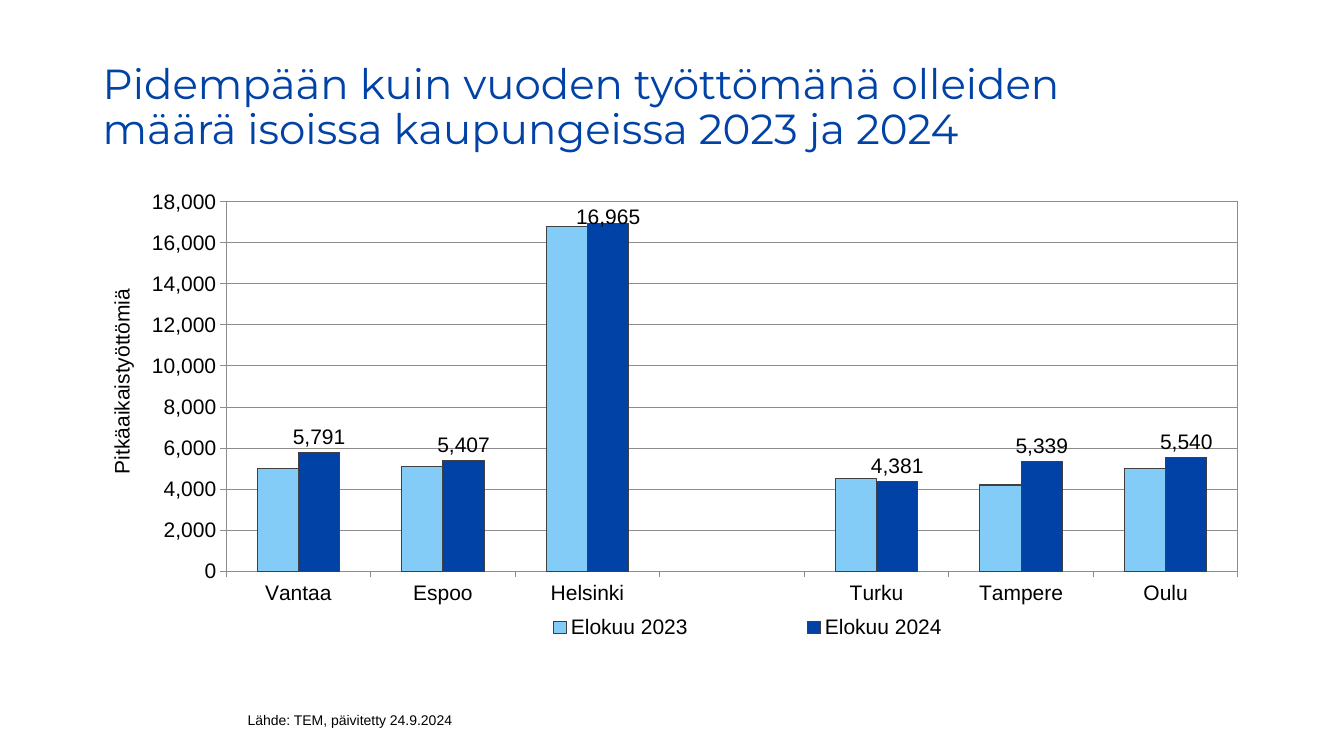
from dataclasses import dataclass
from typing import Any, Optional

from lxml import etree
from pptx import Presentation, util as u
from pptx.chart import data as cd
from pptx.dml import color as col
from pptx.enum import chart as ch, text as tx
from pptx.oxml import ns


@dataclass(frozen=True)
class Theme:
    blue: str = "0042A6"
    sky: str = "84CCF8"
    black: str = "000000"
    edge: str = "404040"
    grid: str = "8C8C8C"
    head: str = "Montserrat"
    body: str = "Arial"
    big: float = 30
    mid: float = 15
    small: float = 10


@dataclass(frozen=True)
class Label:
    words: str
    box: tuple[float, float, float, float]
    face: str
    size: float
    tint: str
    lead: float = 1.0


@dataclass(frozen=True)
class Year:
    name: str
    vals: tuple[Optional[int], ...]
    tint: str


T = Theme()
LABELS = (
    Label("Pidempään kuin vuoden työttömänä olleiden määrä isoissa kaupungeissa 2023 ja 2024",
          (2.34, 1.47, 28.12, 2.77), T.head, T.big, T.blue, 0.9),
    Label("Lähde: TEM, päivitetty 24.9.2024",
          (5.99, 17.81, 11.71, 1.02), T.body, T.small, T.black),
)
CITIES = ("Vantaa", "Espoo", "Helsinki", "", "Turku", "Tampere", "Oulu")
YEARS = (
    Year("Elokuu 2023", (5000, 5100, 16800, None, 4500, 4200, 5000), T.sky),
    Year("Elokuu 2024", (5791, 5407, 16965, None, 4381, 5339, 5540), T.blue),
)


def rgb(tint: str) -> col.RGBColor:
    return col.RGBColor.from_string(tint)


def style(font: Any, face: str, size: float, tint: str) -> None:
    font.name, font.size, font.bold = face, u.Pt(size), False
    font.color.rgb = rgb(tint)


def stroke(line: Any, tint: str) -> None:
    line.color.rgb = rgb(tint)
    line.width = u.Pt(0.75)


def place(item: Any, after: str, **spots: float) -> None:
    """Give a chart part a manual layout, put behind its named child."""
    for old in item.findall(ns.qn("c:layout")):
        item.remove(old)
    lay = etree.Element(ns.qn("c:layout"))
    hand = etree.SubElement(lay, ns.qn("c:manualLayout"))
    if after == "c:layoutStart":
        etree.SubElement(hand, ns.qn("c:layoutTarget")).set("val", "inner")
    if after != "c:idx":
        for mode in ("c:xMode", "c:yMode"):
            etree.SubElement(hand, ns.qn(mode)).set("val", "edge")
    for key, val in spots.items():
        etree.SubElement(hand, ns.qn(f"c:{key}")).set("val", str(val))
    prior = item.find(ns.qn(after))
    if prior is None:
        item.insert(0, lay)
    else:
        prior.addnext(lay)


def write(slide: Any, label: Label) -> None:
    frame = slide.shapes.add_textbox(*map(u.Cm, label.box)).text_frame
    frame.word_wrap = True
    para = frame.paragraphs[0]
    para.line_spacing = label.lead
    run = para.add_run()
    run.text = label.words
    style(run.font, label.face, label.size, label.tint)


def axes(chart: Any) -> None:
    cat, val = chart.category_axis, chart.value_axis
    for axis in (cat, val):
        axis.major_tick_mark = ch.XL_TICK_MARK.OUTSIDE
        axis.minor_tick_mark = ch.XL_TICK_MARK.NONE
        stroke(axis.format.line, T.grid)
    val.minimum_scale, val.maximum_scale, val.major_unit = 0, 18000, 2000
    val.tick_labels.number_format = "#,##0"
    val.tick_labels.number_format_is_linked = False
    stroke(val.major_gridlines.format.line, T.grid)
    run = val.axis_title.text_frame.paragraphs[0].add_run()
    run.text = "Pitkäaikaistyöttömiä"
    style(run.font, T.body, T.mid, T.black)
    place(val.axis_title._element, "c:tx", x=0.01, y=0.21)


def bars(plot: Any) -> None:
    plot.gap_width, plot.overlap = 150, 0
    plot.vary_by_categories = False
    for year, row in zip(YEARS, plot.series):
        row.format.fill.solid()
        row.format.fill.fore_color.rgb = rgb(year.tint)
        stroke(row.format.line, T.edge)
    # Values above the later year, with the tallest moved down a little
    marks = plot.series[1].data_labels
    marks.show_value = True
    marks.number_format, marks.number_format_is_linked = "#,##0", False
    marks.position = ch.XL_LABEL_POSITION.OUTSIDE_END
    style(marks.font, T.body, T.mid, T.black)
    top = plot.series[1].points[CITIES.index("Helsinki")].data_label
    top.position = ch.XL_LABEL_POSITION.OUTSIDE_END
    place(top._dLbl, "c:idx", x=0, y=0.02)


def draw(slide: Any) -> None:
    data = cd.CategoryChartData(number_format="#,##0")
    data.categories = CITIES
    for year in YEARS:
        data.add_series(year.name, year.vals)
    box = map(u.Cm, (2.34, 4.75, 29.21, 11.58))
    chart = slide.shapes.add_chart(ch.XL_CHART_TYPE.COLUMN_CLUSTERED, *box, data).chart
    chart.has_title = False
    style(chart.font, T.body, T.mid, T.black)
    axes(chart)
    bars(chart.plots[0])
    # Legend under the plot
    chart.has_legend = True
    chart.legend.position = ch.XL_LEGEND_POSITION.BOTTOM
    chart.legend.include_in_layout = False
    place(chart.legend._element, "c:legendPos", x=0.3, y=0.92, w=0.53, h=0.07)
    # Plot area and its frame
    area = chart._chartSpace.chart.plotArea
    place(area, "c:layoutStart", x=0.115, y=0.029, w=0.873, h=0.804)
    props = etree.SubElement(area, ns.qn("c:spPr"))
    etree.SubElement(props, ns.qn("a:noFill"))
    line = etree.SubElement(props, ns.qn("a:ln"), w=str(u.Pt(0.75)))
    fill = etree.SubElement(line, ns.qn("a:solidFill"))
    etree.SubElement(fill, ns.qn("a:srgbClr"), val=T.grid)


def main() -> None:
    deck = Presentation()
    deck.slide_width, deck.slide_height = u.Cm(33.87), u.Cm(19.05)
    slide = deck.slides.add_slide(deck.slide_layouts[6])
    for label in LABELS:
        write(slide, label)
    draw(slide)
    deck.save("out.pptx")


if __name__ == "__main__":
    main()
